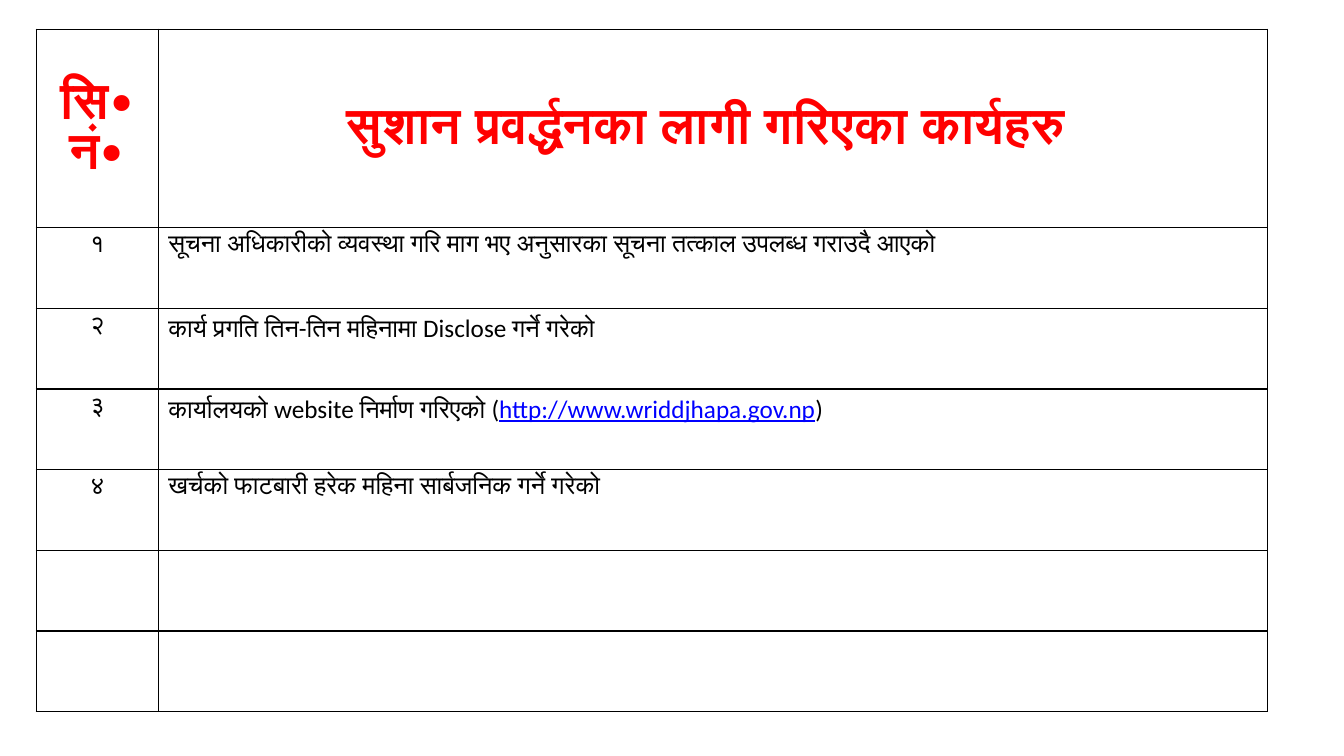
"""Build a slide with a table of good-governance activities."""
from dataclasses import dataclass

from lxml.etree import SubElement
from pptx import Presentation
from pptx.dml.color import RGBColor
from pptx.enum.text import MSO_ANCHOR, PP_ALIGN
from pptx.oxml.ns import qn
from pptx.table import _Cell
from pptx.util import Inches, Pt

BLACK, WHITE, RED, BLUE = "000000", "FFFFFF", "FF0000", "0000FF"
COLUMN_WIDTHS = (1.21, 11)
HEADER_HEIGHT, ACTIVITY_HEIGHT = 1.97, 0.8
BORDER_WIDTH = Pt(1)


@dataclass(frozen=True)
class Span:
    text: str
    size: int = 18
    font: str = "Calibri"
    color: str = BLACK
    bold: bool = False
    underline: bool = False


@dataclass(frozen=True)
class Entry:
    spans: tuple[Span, ...] = ()
    align: PP_ALIGN = PP_ALIGN.LEFT
    anchor: MSO_ANCHOR = MSO_ANCHOR.TOP


def rgb(color: str) -> RGBColor:
    return RGBColor.from_string(color)


def heading(text: str, font: str) -> Entry:
    span = Span(text, size=36, font=font, color=RED, bold=True)
    return Entry((span,), PP_ALIGN.CENTER, MSO_ANCHOR.MIDDLE)


def activity(number: str, *spans: Span) -> tuple[Entry, Entry]:
    return Entry((Span(number),), PP_ALIGN.CENTER), Entry(spans)


ROWS = (
    (heading("सि∙नं∙", "Calibri"),
     heading("सुशान प्रवर्द्धनका लागी गरिएका कार्यहरु ", "Arial")),
    activity("१", Span("सूचना अधिकारीको व्यवस्था गरि माग भए अनुसारका सूचना तत्काल उपलब्ध गराउदै आएको")),
    activity("२", Span("कार्य प्रगति तिन-तिन महिनामा Disclose गर्ने गरेको")),
    activity("३", Span("कार्यालयको website निर्माण गरिएको ("),
             Span("http://www.wriddjhapa.gov.np", color=BLUE, underline=True),
             Span(")")),
    activity("४", Span("खर्चको फाटबारी हरेक महिना सार्बजनिक गर्ने गरेको")),
    (Entry(), Entry()),
    (Entry(), Entry()),
)


def add_borders(cell: _Cell) -> None:
    properties = cell._tc.get_or_add_tcPr()
    for side in ("a:lnL", "a:lnR", "a:lnT", "a:lnB"):
        border = SubElement(properties, qn(side), w=str(BORDER_WIDTH))
        fill = SubElement(border, qn("a:solidFill"))
        SubElement(fill, qn("a:srgbClr"), val=BLACK)


def write_entry(cell: _Cell, entry: Entry) -> None:
    add_borders(cell)
    cell.fill.solid()
    cell.fill.fore_color.rgb = rgb(WHITE)
    cell.vertical_anchor = entry.anchor
    cell.margin_left = cell.margin_right = Inches(0.1)
    cell.margin_top = cell.margin_bottom = Inches(0.05)
    paragraph = cell.text_frame.paragraphs[0]
    paragraph.alignment = entry.align
    for span in entry.spans:
        run = paragraph.add_run()
        run.text = span.text
        run.font.size = Pt(span.size)
        run.font.name = span.font
        run.font.bold = span.bold
        run.font.underline = span.underline
        run.font.color.rgb = rgb(span.color)


def main() -> None:
    presentation = Presentation()
    presentation.slide_width = Inches(13.33)
    presentation.slide_height = Inches(7.5)
    slide = presentation.slides.add_slide(presentation.slide_layouts[6])

    heights = [HEADER_HEIGHT] + [ACTIVITY_HEIGHT] * (len(ROWS) - 1)
    activities = slide.shapes.add_table(
        len(ROWS), len(COLUMN_WIDTHS), Inches(0.36), Inches(0.29),
        Inches(sum(COLUMN_WIDTHS)), Inches(sum(heights))).table
    for column, width in zip(activities.columns, COLUMN_WIDTHS):
        column.width = Inches(width)
    for row, height, entries in zip(activities.rows, heights, ROWS):
        row.height = Inches(height)
        for cell, entry in zip(row.cells, entries):
            write_entry(cell, entry)

    presentation.save("out.pptx")


if __name__ == "__main__":
    main()
